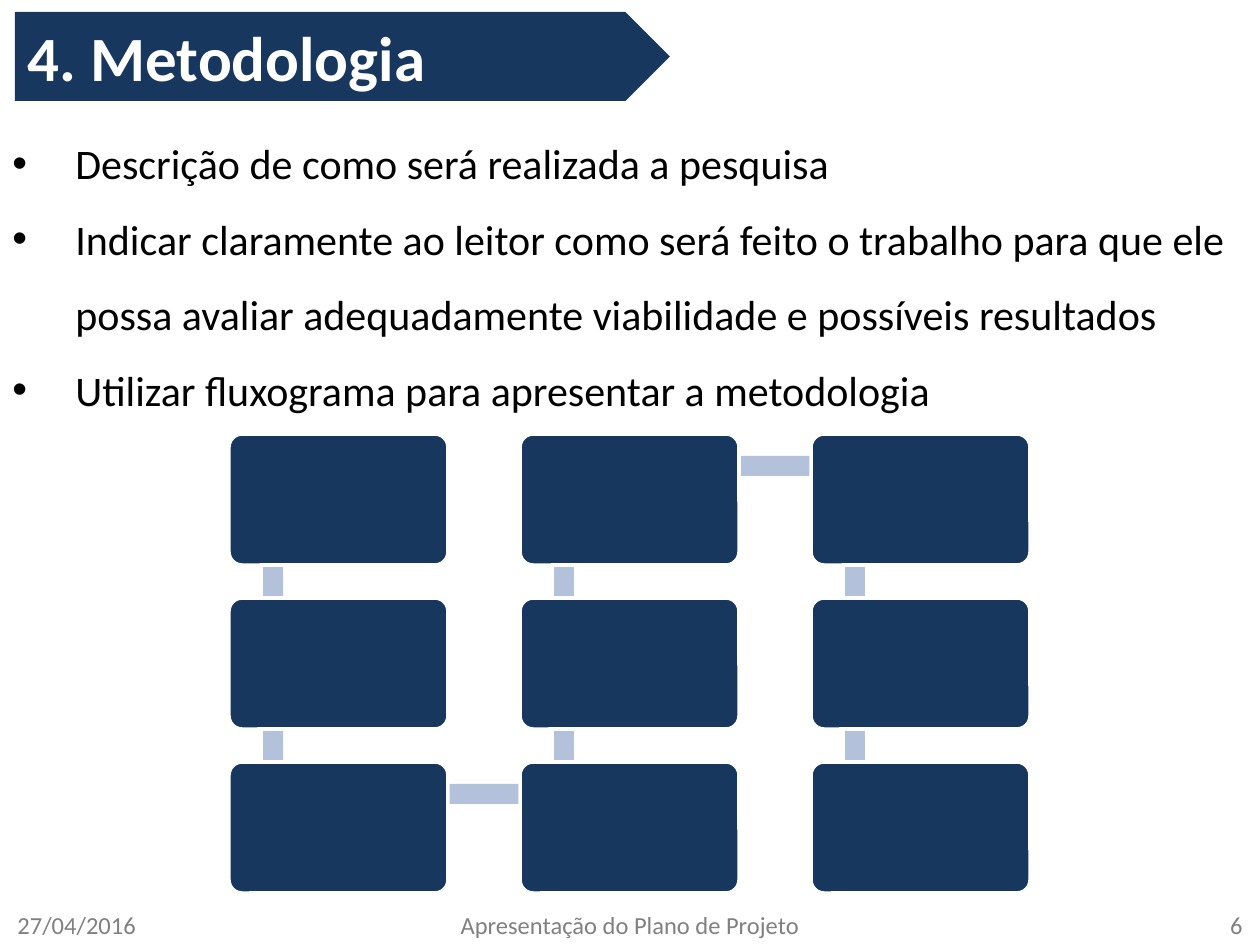
import math
from itertools import pairwise

from lxml import etree
from pptx import Presentation
from pptx import util as u
from pptx.dml.color import RGBColor
from pptx.enum import shapes, text
from pptx.oxml import ns

PX = u.Inches(1) / 126
NAVY, PALE, WHITE, BLACK, GRAY = "17375E", "B3C1DB", "FFFFFF", "000000", "808080"
LEFT, CENTER, RIGHT = text.PP_ALIGN.LEFT, text.PP_ALIGN.CENTER, text.PP_ALIGN.RIGHT


def px(length):
    return u.Emu(round(length * PX))


def color(value):
    return RGBColor.from_string(value)


class SlideWriter:
    font = "Calibri"

    def __init__(self, slide):
        self.slide = slide

    def place(self, shape, left, top, width, height):
        shape.left, shape.top = px(left), px(top)
        shape.width, shape.height = px(width), px(height)

    def span(self, para, words, size, ink, bold=False):
        run = para.add_run()
        run.text = words
        run.font.name, run.font.size, run.font.bold = self.font, u.Pt(size), bold
        run.font.color.rgb = color(ink)

    def shape(self, kind, left, top, width, height, fill):
        shape = self.slide.shapes.add_shape(
            kind, px(left), px(top), px(width), px(height))
        shape.shadow.inherit = False
        shape.fill.solid()
        shape.fill.fore_color.rgb = color(fill)
        shape.line.fill.background()
        return shape

    def title(self, words, left, top, width, height):
        self.shape(shapes.MSO_SHAPE.PENTAGON, left, top, width, height, NAVY)
        title = self.slide.shapes.title
        self.place(title, left, top, width, height)
        # Bring the title in front of its banner.
        self.slide.shapes._spTree.append(title._element)
        frame = title.text_frame
        frame.auto_size = text.MSO_AUTO_SIZE.NONE
        frame.vertical_anchor = text.MSO_ANCHOR.MIDDLE
        para = frame.paragraphs[0]
        para.alignment = LEFT
        self.span(para, words, 36, WHITE, bold=True)

    def box(self, left, top, width, height, anchor):
        frame = self.slide.shapes.add_textbox(
            px(left), px(top), px(width), px(height)).text_frame
        frame.word_wrap = True
        frame.vertical_anchor = anchor
        return frame

    def bullets(self, items, left, top, width, height):
        frame = self.box(left, top, width, height, text.MSO_ANCHOR.TOP)
        for index, item in enumerate(items):
            para = frame.add_paragraph() if index else frame.paragraphs[0]
            para.line_spacing = 1.5
            props = para._p.get_or_add_pPr()
            props.set("marL", str(px(63)))
            props.set("indent", str(px(-63)))
            etree.SubElement(props, ns.qn("a:buFont"), typeface="Arial")
            etree.SubElement(props, ns.qn("a:buChar"), char="•")
            self.span(para, item, 24, BLACK)

    def footer(self, words, left, width, align):
        frame = self.box(left, 900, width, 50, text.MSO_ANCHOR.MIDDLE)
        para = frame.paragraphs[0]
        para.alignment = align
        self.span(para, words, 14, GRAY)

    def step(self, left, top, width, height):
        step = self.shape(shapes.MSO_SHAPE.ROUNDED_RECTANGLE,
                          left, top, width, height, NAVY)
        step.adjustments[0] = 0.1
        step.line.color.rgb = color(WHITE)
        step.line.width = u.Pt(2)

    def bar(self, start, end, thickness=20):
        """Draw a bar along the line between two points."""
        (x1, y1), (x2, y2) = start, end
        length = math.dist(start, end)
        bar = self.shape(shapes.MSO_SHAPE.RECTANGLE, (x1 + x2 - length) / 2,
                         (y1 + y2 - thickness) / 2, length, thickness, PALE)
        bar.rotation = math.degrees(math.atan2(y2 - y1, x2 - x1)) % 360

    def flowchart(self, left, top, columns, rows):
        """Draw steps that run down one column and up the next."""
        corners = [(left + 291 * column, top + 164 * row)
                   for column in range(columns)
                   for row in (range(rows) if column % 2 == 0
                               else reversed(range(rows)))]
        joints = [(x + 44, y + 32) for x, y in corners]
        for start, end in pairwise(joints):
            self.bar(start, end)
        for x, y in corners:
            self.step(x, y, 219, 131)


def main():
    deck = Presentation()
    deck.slide_width, deck.slide_height = px(1260), px(945)
    page = SlideWriter(deck.slides.add_slide(deck.slide_layouts[5]))

    page.footer("27/04/2016", 5, 294, LEFT)
    page.footer("Apresentação do Plano de Projeto", 430, 400, CENTER)
    page.footer("6", 961, 294, RIGHT)
    page.title("4. Metodologia", 15, 12, 655, 89)
    page.bullets([
        "Descrição de como será realizada a pesquisa",
        "Indicar claramente ao leitor como será feito o trabalho para que ele "
        "possa avaliar adequadamente viabilidade e possíveis resultados",
        "Utilizar fluxograma para apresentar a metodologia",
    ], 0, 106, 1260, 462)
    page.flowchart(229, 434, columns=3, rows=3)

    deck.save("out.pptx")


if __name__ == "__main__":
    main()
